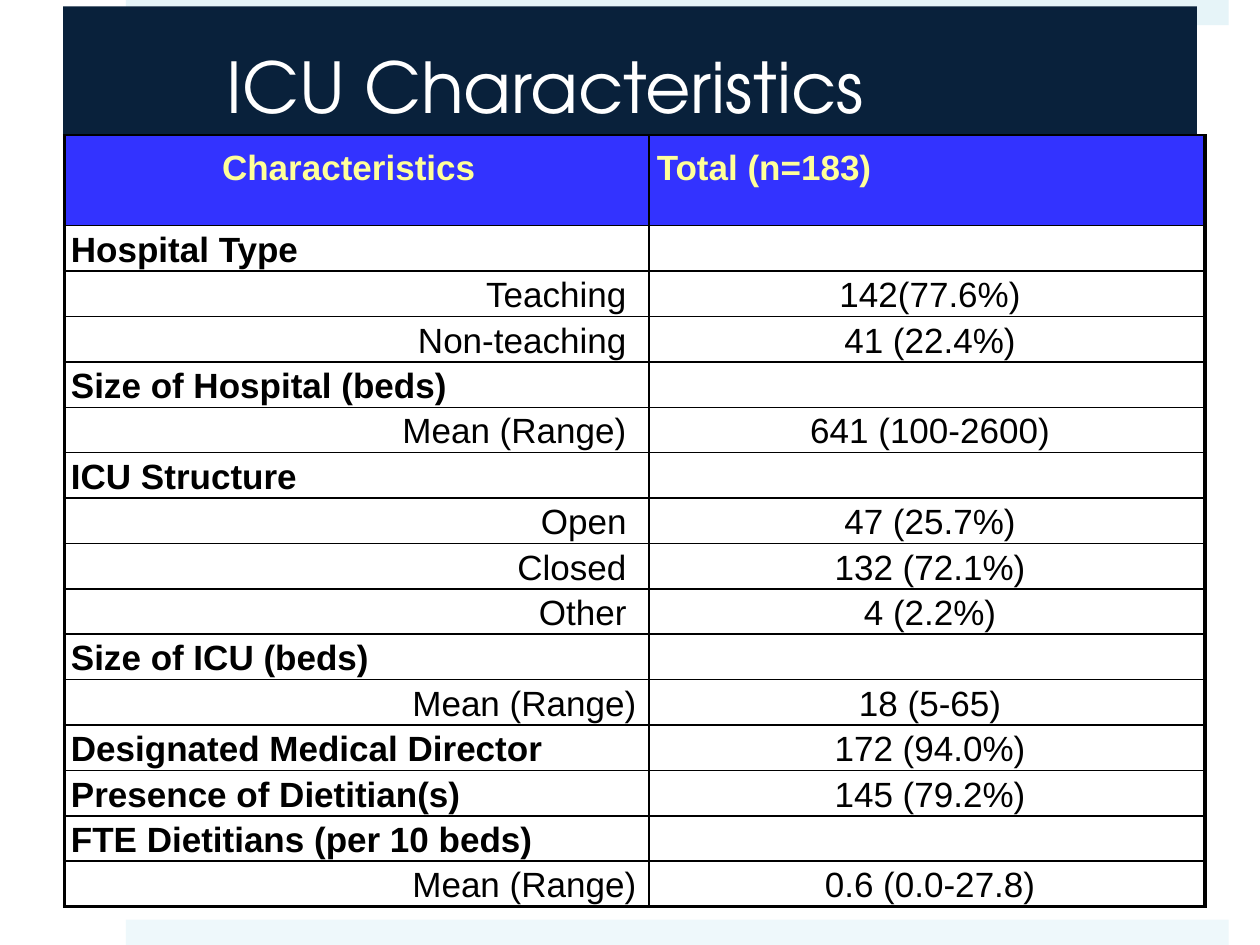
import pptx
import pptx.dml.color
import pptx.enum.shapes
import pptx.enum.text
import pptx.oxml
import pptx.oxml.ns
import pptx.util
from pptx.util import Cm

# Content: heading rows start a group, detail rows sit on the right under them
TITLE = "ICU Characteristics"
HEADER = ("Characteristics", "Total (n=183)")
ROWS = [
    ("heading", "Hospital Type", ""),
    ("detail", "Teaching", "142(77.6%)"),
    ("detail", "Non-teaching", "41 (22.4%)"),
    ("heading", "Size of Hospital (beds)", ""),
    ("detail", "Mean (Range)", "641 (100-2600)"),
    ("heading", "ICU Structure", ""),
    ("detail", "Open", "47 (25.7%)"),
    ("detail", "Closed", "132 (72.1%)"),
    ("detail", "Other", "4 (2.2%)"),
    ("heading", "Size of ICU (beds)", ""),
    ("outer detail", "Mean (Range)", "18 (5-65)"),
    ("heading", "Designated Medical Director", "172 (94.0%)"),
    ("heading", "Presence of Dietitian(s)", "145 (79.2%)"),
    ("heading", "FTE Dietitians (per 10 beds)", ""),
    ("outer detail", "Mean (Range)", "0.6 (0.0-27.8)"),
]

THEME = {
    "title_font": "TeX Gyre Adventor", "title_size": 40,
    "table_font": "Arial", "table_size": 20,
    "title_fill": "09213B", "title_text": "FFFFFF",
    "top_band": "E6F4F8", "bottom_band": "EEF8FB",
    "header_fill": "3333FF", "header_text": "FFFF99",
    "cell_fill": "FFFFFF", "cell_text": "000000", "border": "000000",
    "thin": 1, "thick": 2.25,
}

# Layout, in centimetres
PAGE_WIDTH, PAGE_HEIGHT = 25.4, 19.05
BAND_LEFT, BAND_WIDTH, BAND_HEIGHT = 2.54, 22.23, 0.51
TABLE_LEFT, TABLE_TOP, TABLE_HEIGHT = 1.3, 2.72, 15.56
COLUMN_WIDTHS = (11.78, 11.21)
HEADER_HEIGHT = 1.83
ROW_HEIGHT = (TABLE_HEIGHT - HEADER_HEIGHT) / len(ROWS)
RIGHT_INSETS = {"heading": 0.25, "detail": 0.45, "outer detail": 0.25}

ALIGN = pptx.enum.text.PP_ALIGN


def color(name):
    return pptx.dml.color.RGBColor.from_string(THEME[name])


def paint(target, name):
    target.fill.solid()
    target.fill.fore_color.rgb = color(name)


def style_text(para, font, size, text_color, bold=False):
    for span in para.runs:
        span.font.name = THEME[font]
        span.font.size = pptx.util.Pt(THEME[size])
        span.font.color.rgb = color(text_color)
        span.font.bold = bold


def set_borders(cell, widths):
    properties = cell._tc.get_or_add_tcPr()
    for index, (side, width) in enumerate(widths.items()):
        properties.insert(index, pptx.oxml.parse_xml(
            f'<a:ln{side} {pptx.oxml.ns.nsdecls("a")} w="{pptx.util.Pt(width)}">'
            f'<a:solidFill><a:srgbClr val="{THEME["border"]}"/></a:solidFill>'
            f'</a:ln{side}>'))


def fill_cell(cell, text, fill, text_color, align, bold, insets):
    cell.margin_left, cell.margin_top, cell.margin_right, cell.margin_bottom = map(Cm, insets)
    cell.text_frame.text = text
    para = cell.text_frame.paragraphs[0]
    para.alignment = align
    style_text(para, "table_font", "table_size", text_color, bold)
    paint(cell, fill)


def add_bands(page, title):
    for top, fill in ((0, "top_band"), (PAGE_HEIGHT - BAND_HEIGHT, "bottom_band")):
        band = page.shapes.add_shape(
            pptx.enum.shapes.MSO_SHAPE.RECTANGLE,
            Cm(BAND_LEFT), Cm(top), Cm(BAND_WIDTH), Cm(BAND_HEIGHT))
        band.shadow.inherit = False
        band.line.fill.background()
        paint(band, fill)
        title.element.addprevious(band.element)  # keep bands behind the title


def format_title(title):
    title.left, title.top, title.width, title.height = map(Cm, (1.27, 0.13, 22.86, 3.18))
    paint(title, "title_fill")
    frame = title.text_frame
    frame.text = TITLE
    frame.word_wrap = True
    frame.auto_size = pptx.enum.text.MSO_AUTO_SIZE.NONE
    frame.vertical_anchor = pptx.enum.text.MSO_ANCHOR.MIDDLE
    frame.margin_left, frame.margin_right = Cm(3.3), Cm(0.76)
    frame.margin_top = frame.margin_bottom = Cm(0.13)
    frame.paragraphs[0].alignment = ALIGN.LEFT
    style_text(frame.paragraphs[0], "title_font", "title_size", "title_text")


def add_characteristics_table(page):
    table = page.shapes.add_table(
        len(ROWS) + 1, 2, Cm(TABLE_LEFT), Cm(TABLE_TOP),
        Cm(sum(COLUMN_WIDTHS)), Cm(TABLE_HEIGHT)).table
    table.first_row = table.horz_banding = False
    for column, width in zip(table.columns, COLUMN_WIDTHS):
        column.width = Cm(width)
    for index, row in enumerate(table.rows):
        row.height = Cm(ROW_HEIGHT if index else HEADER_HEIGHT)

    # Header row
    for column, (align, insets) in enumerate((
            (ALIGN.CENTER, (0.13, 0.27, 0.45, 0)), (ALIGN.LEFT, (0.16, 0.27, 0, 0)))):
        fill_cell(table.cell(0, column), HEADER[column], "header_fill",
                  "header_text", align, True, insets)

    # Body rows
    for index, (kind, label, value) in enumerate(ROWS, start=1):
        heading = kind == "heading"
        fill_cell(table.cell(index, 0), label, "cell_fill", "cell_text",
                  ALIGN.LEFT if heading else ALIGN.RIGHT, heading,
                  (0.13, 0.1, RIGHT_INSETS[kind], 0))
        fill_cell(table.cell(index, 1), value, "cell_fill", "cell_text",
                  ALIGN.CENTER, False, (0.13, 0.1, 0, 0))

    # Thick lines on the outer sides and bottom, thin lines elsewhere
    thin, thick = THEME["thin"], THEME["thick"]
    for index in range(len(ROWS) + 1):
        for column in range(2):
            set_borders(table.cell(index, column), {
                "L": thin if column else thick,
                "R": thick if column else thin,
                "T": thin,
                "B": thick if index == len(ROWS) else thin,
            })


def main():
    deck = pptx.Presentation()
    deck.slide_width, deck.slide_height = Cm(PAGE_WIDTH), Cm(PAGE_HEIGHT)
    page = deck.slides.add_slide(deck.slide_layouts[5])
    title = page.shapes.title
    format_title(title)
    add_bands(page, title)
    add_characteristics_table(page)
    deck.save("out.pptx")


if __name__ == "__main__":
    main()
